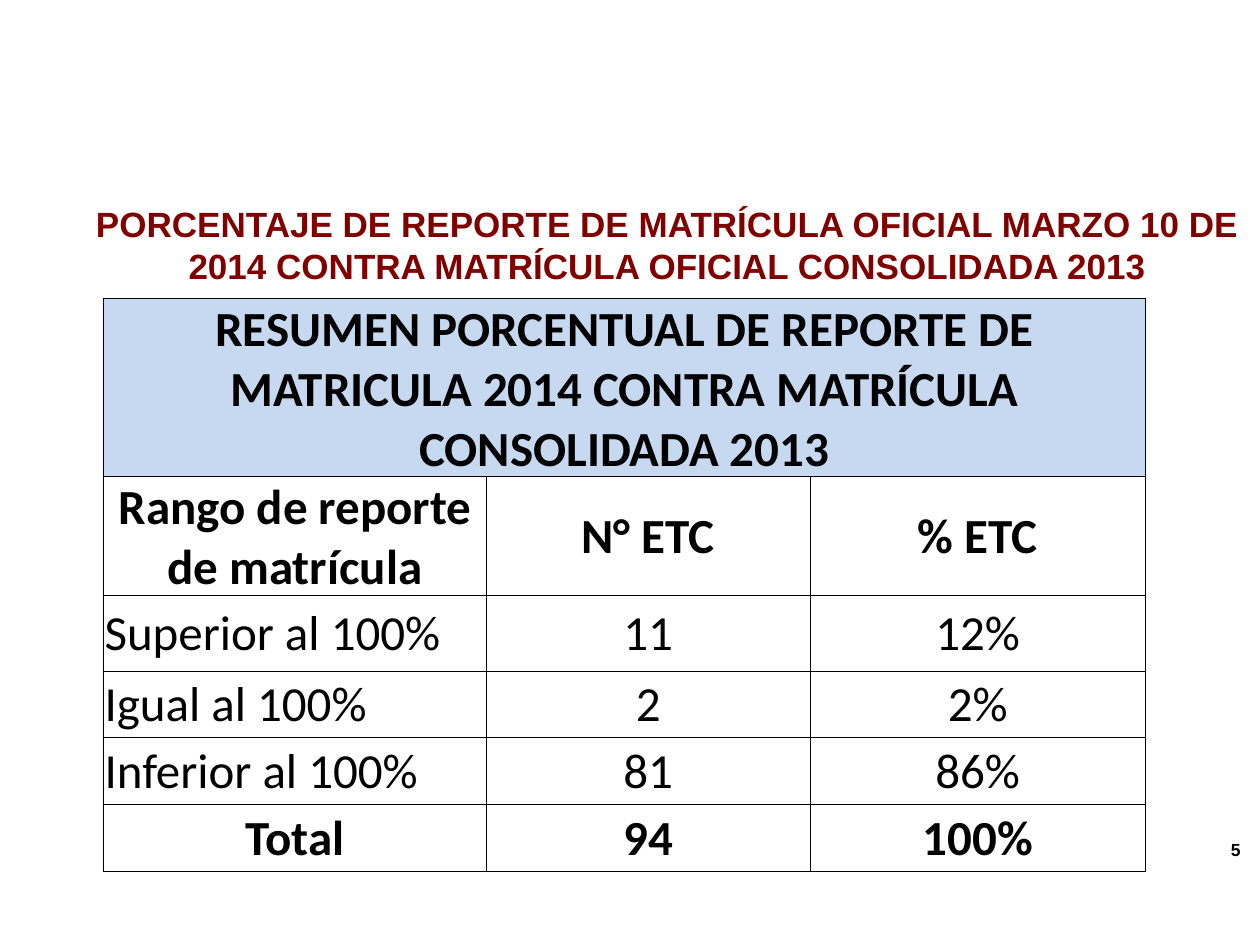
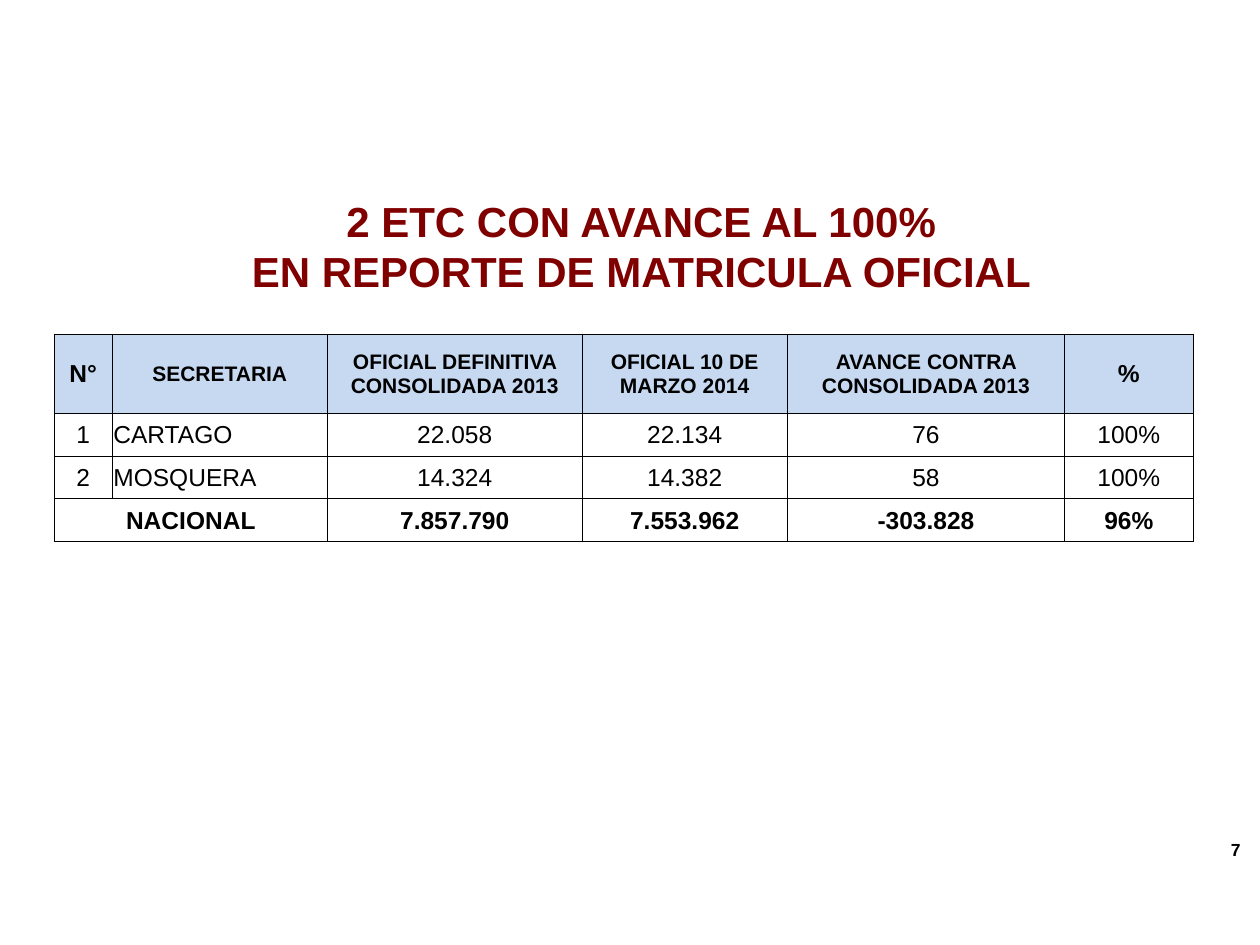
from dataclasses import dataclass

from lxml.etree import SubElement
from pptx import Presentation
from pptx.dml.color import RGBColor
from pptx.enum.text import MSO_ANCHOR as Anchor, MSO_AUTO_SIZE as AutoSize, PP_ALIGN as Align
from pptx.oxml.ns import qn
from pptx.slide import Slide
from pptx.table import _Cell as Cell
from pptx.text.text import TextFrame
from pptx.util import Inches, Pt

BLACK = RGBColor(0x00, 0x00, 0x00)
MAROON = RGBColor(0x80, 0x00, 0x00)
HEADER_BLUE = RGBColor(0xC6, 0xD9, 0xF1)


@dataclass(frozen=True)
class Box:
    left: float
    top: float
    width: float
    height: float

    def emu(self) -> list[int]:
        return [Inches(v) for v in (self.left, self.top, self.width, self.height)]


@dataclass(frozen=True)
class Title:
    text: str
    box: Box
    size: int


@dataclass(frozen=True)
class Grid:
    left: float
    top: float
    cols: list[float]
    heights: list[float]
    rows: list[list[str | None]]
    font: str
    size: int
    header_rows: int
    name_col: int
    header_sizes: tuple[int, ...]


@dataclass(frozen=True)
class Page:
    number: int
    title: Title
    grid: Grid


PAGE_NUMBER_BOX = Box(9.67, 6.74, 0.22, 0.17)

PAGES = [
    Page(
        5,
        Title(
            "PORCENTAJE DE REPORTE DE MATRÍCULA OFICIAL MARZO 10 DE 2014 "
            "CONTRA MATRÍCULA OFICIAL CONSOLIDADA 2013",
            Box(0.59, 1.56, 9.41, 0.77), 20,
        ),
        Grid(
            0.82, 2.37, [3.04, 2.57, 2.66], [1.41, 0.94, 0.6, 0.53, 0.53, 0.53],
            [
                ["RESUMEN PORCENTUAL DE REPORTE DE MATRICULA 2014 "
                 "CONTRA MATRÍCULA CONSOLIDADA 2013", None, None],
                ["Rango de reporte de matrícula", "N° ETC", "% ETC"],
                ["Superior al 100%", "11", "12%"],
                ["Igual al 100%", "2", "2%"],
                ["Inferior al 100%", "81", "86%"],
                ["Total", "94", "100%"],
            ],
            "Calibri", 28, header_rows=2, name_col=0, header_sizes=(28, 28, 28),
        ),
    ),
    Page(
        7,
        Title(
            "2 ETC CON AVANCE AL 100% \nEN REPORTE DE MATRICULA OFICIAL ",
            Box(0.27, 1.5, 9.73, 0.91), 24,
        ),
        Grid(
            0.43, 2.65, [0.46, 1.71, 2.02, 1.63, 2.2, 1.02], [0.63, 0.34, 0.34, 0.34],
            [
                ["N°", "SECRETARIA", "OFICIAL DEFINITIVA CONSOLIDADA 2013",
                 "OFICIAL 10 DE\nMARZO 2014", "AVANCE CONTRA CONSOLIDADA 2013", "%"],
                ["1", "CARTAGO", "22.058", "22.134", "76", "100%"],
                ["2", "MOSQUERA", "14.324", "14.382", "58", "100%"],
                ["NACIONAL", None, "7.857.790", "7.553.962", "-303.828", "96%"],
            ],
            "Arial", 14, header_rows=1, name_col=1, header_sizes=(14, 12, 12, 12, 12, 14),
        ),
    ),
]


def write(tf: TextFrame, text: str, *, size: int, font: str = "Arial",
          color: RGBColor = BLACK, bold: bool = True, align: Align = Align.CENTER) -> None:
    tf.word_wrap = True
    for i, line in enumerate(text.split("\n")):
        p = tf.paragraphs[0] if i == 0 else tf.add_paragraph()
        p.alignment = align
        r = p.add_run()
        r.text = line
        r.font.name = font
        r.font.size = Pt(size)
        r.font.bold = bold
        r.font.color.rgb = color


def add_title(s: Slide, title: Title) -> None:
    tf = s.shapes.add_textbox(*title.box.emu()).text_frame
    write(tf, title.text, size=title.size, color=MAROON)
    tf.auto_size = AutoSize.SHAPE_TO_FIT_TEXT


def add_page_number(s: Slide, number: int) -> None:
    tf = s.shapes.add_textbox(*PAGE_NUMBER_BOX.emu()).text_frame
    tf.vertical_anchor = Anchor.MIDDLE
    write(tf, f"{number} ", size=10, align=Align.RIGHT)


def style_cell(cell: Cell, header: bool) -> None:
    cell.vertical_anchor = Anchor.MIDDLE
    cell.margin_left = cell.margin_right = cell.margin_top = Inches(0.01)
    cell.margin_bottom = 0
    props = cell._tc.get_or_add_tcPr()
    for side in ("a:lnL", "a:lnR", "a:lnT", "a:lnB"):
        line = SubElement(props, qn(side), w=str(Pt(0.5)))
        SubElement(SubElement(line, qn("a:solidFill")), qn("a:srgbClr"), val=str(BLACK))
    if header:
        cell.fill.solid()
        cell.fill.fore_color.rgb = HEADER_BLUE
    else:
        cell.fill.background()


def add_grid(s: Slide, grid: Grid) -> None:
    box = Box(grid.left, grid.top, sum(grid.cols), sum(grid.heights))
    table = s.shapes.add_table(len(grid.rows), len(grid.cols), *box.emu()).table
    table.first_row = table.horz_banding = False
    for column, width in zip(table.columns, grid.cols):
        column.width = Inches(width)
    for row, height in zip(table.rows, grid.heights):
        row.height = Inches(height)
    last = len(grid.rows) - 1
    for i, texts in enumerate(grid.rows):
        body = grid.header_rows <= i < last
        for j, text in enumerate(texts):
            cell = table.cell(i, j)
            style_cell(cell, header=i == 0)
            if text is not None:
                write(cell.text_frame, text, font=grid.font, bold=not body,
                      size=grid.header_sizes[j] if i == 0 else grid.size,
                      align=Align.LEFT if body and j == grid.name_col else Align.CENTER)
        if None in texts:
            table.cell(i, 0).merge(table.cell(i, texts.count(None)))


def main() -> None:
    prs = Presentation()
    prs.slide_width, prs.slide_height = Inches(10), Inches(7.5)
    for page in PAGES:
        s = prs.slides.add_slide(prs.slide_layouts[6])
        add_page_number(s, page.number)
        add_title(s, page.title)
        add_grid(s, page.grid)
    prs.save("out.pptx")


if __name__ == "__main__":
    main()
